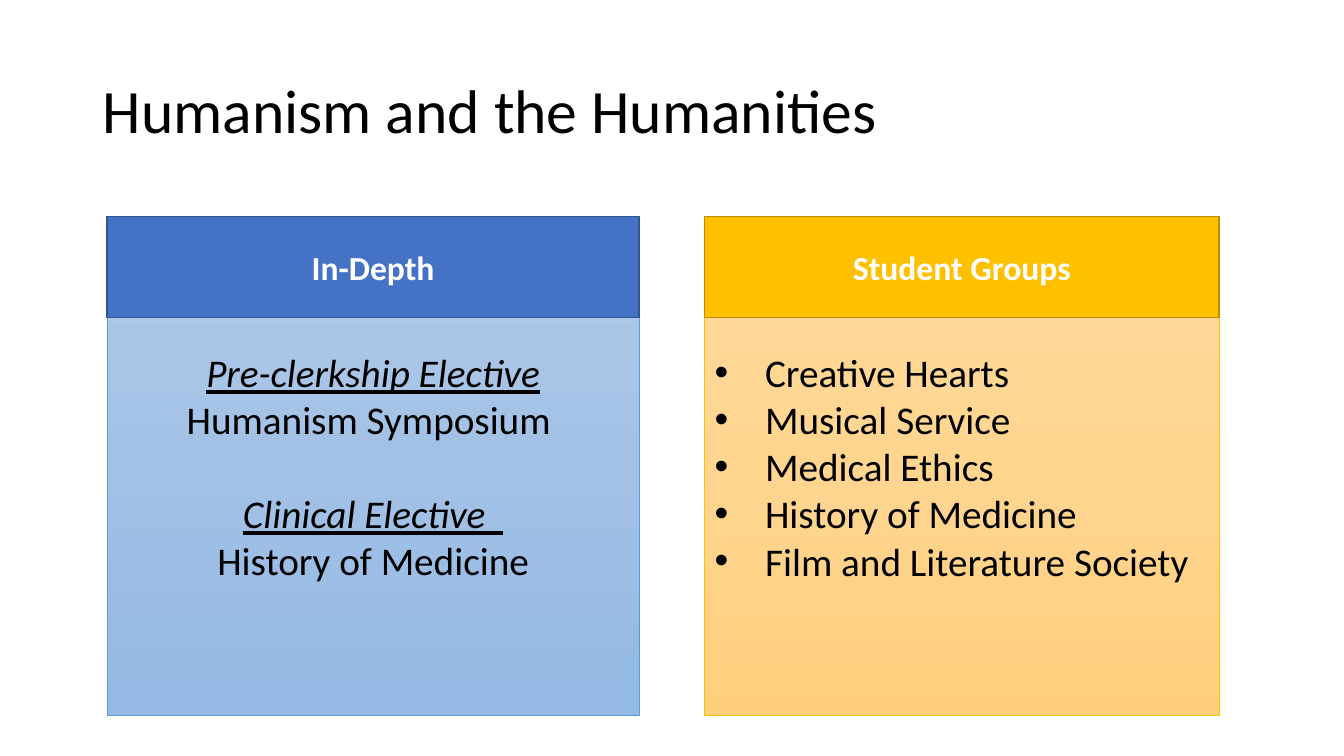
from copy import deepcopy

from lxml import etree
from pptx import Presentation
from pptx.dml.color import RGBColor
from pptx.enum.shapes import MSO_SHAPE
from pptx.enum.text import MSO_ANCHOR, PP_ALIGN
from pptx.oxml.ns import qn
from pptx.util import Inches, Pt

RECTANGLE = MSO_SHAPE.RECTANGLE
MIDDLE = MSO_ANCHOR.MIDDLE
CENTER, LEFT = PP_ALIGN.CENTER, PP_ALIGN.LEFT

FONT = "Calibri"
BLACK, WHITE = "000000", "FFFFFF"
TITLE = "Humanism and the Humanities"
ELECTIVES = [
    ("Pre-clerkship Elective", "Humanism Symposium "),
    ("Clinical Elective  ", "History of Medicine"),
]
GROUPS = [
    "Creative Hearts",
    "Musical Service",
    "Medical Ethics",
    "History of Medicine",
    "Film and Literature Society",
]
COLUMNS = [
    {"heading": "In-Depth", "left": 1.06, "width": 5.28,
     "header_fill": "4472C4", "header_line": "325491",
     "gradient": ["B1CBE9", "A3C1E5", "93B9E4"], "body_line": "5B9BD5"},
    {"heading": "Student Groups", "left": 6.99, "width": 5.1,
     "header_fill": "FFC000", "header_line": "BD8E00",
     "gradient": ["FFDB9E", "FFD590", "FFD07C"], "body_line": "FFC000"},
]
TOP, HEADER_HEIGHT, BODY_HEIGHT = 2.15, 1, 4.95
BODY_SIZE, HEADING_SIZE, TITLE_SIZE = 28, 24, 44
LINE_SPACING = 1.2
BULLET_INDENT = Inches(0.5)


def rgb(color):
    return RGBColor.from_string(color)


def add_run(paragraph, text, size, color=BLACK, **styles):
    run = paragraph.add_run()
    run.text = text
    run.font.name = FONT
    run.font.size = Pt(size)
    run.font.color.rgb = rgb(color)
    for style, value in styles.items():
        setattr(run.font, style, value)


def next_paragraph(frame, alignment):
    """Return the still empty first paragraph, or a new one."""
    first = frame.paragraphs[0]
    paragraph = frame.add_paragraph() if first.runs else first
    paragraph.alignment = alignment
    return paragraph


def add_box(slide, column, height, line_color, line_width):
    shape = slide.shapes.add_shape(
        RECTANGLE, Inches(column["left"]), Inches(TOP),
        Inches(column["width"]), Inches(height))
    shape.shadow.inherit = False
    shape.line.color.rgb = rgb(line_color)
    shape.line.width = Pt(line_width)
    shape.text_frame.word_wrap = True
    shape.text_frame.vertical_anchor = MIDDLE
    return shape


def fill_gradient(shape, colors):
    """Fill from top to bottom with evenly spaced colours."""
    shape.fill.gradient()
    shape.fill.gradient_angle = 270
    stop_list = shape._element.spPr.find(".//" + qn("a:gsLst"))
    while len(stop_list) < len(colors):
        stop_list.append(deepcopy(stop_list[0]))
    for index, (stop, color) in enumerate(zip(shape.fill.gradient_stops, colors)):
        stop.position = index / (len(colors) - 1)
        stop.color.rgb = rgb(color)


def add_bullet(paragraph):
    properties = paragraph._p.get_or_add_pPr()
    properties.set("marL", str(BULLET_INDENT))
    properties.set("indent", str(-BULLET_INDENT))
    etree.SubElement(properties, qn("a:buFont"), typeface="Arial")
    etree.SubElement(properties, qn("a:buChar"), char="•")


def write_electives(frame):
    for index, (kind, course) in enumerate(ELECTIVES):
        paragraph = next_paragraph(frame, CENTER)
        if index:
            paragraph.space_before = Pt(BODY_SIZE * LINE_SPACING)
        add_run(paragraph, kind, BODY_SIZE, italic=True, underline=True)
        add_run(next_paragraph(frame, CENTER), course, BODY_SIZE)


def write_groups(frame):
    for group in GROUPS:
        paragraph = next_paragraph(frame, LEFT)
        add_bullet(paragraph)
        add_run(paragraph, group, BODY_SIZE)


def main():
    presentation = Presentation()
    presentation.slide_width = Inches(13.33)
    presentation.slide_height = Inches(7.5)
    slide = presentation.slides.add_slide(presentation.slide_layouts[5])

    title = slide.shapes.title
    title.left, title.top = Inches(0.92), Inches(0.4)
    title.width, title.height = Inches(11.5), Inches(1.45)
    title.text_frame.vertical_anchor = MIDDLE
    paragraph = next_paragraph(title.text_frame, LEFT)
    paragraph.line_spacing = 0.9
    add_run(paragraph, TITLE, TITLE_SIZE)

    for column, write_body in zip(COLUMNS, (write_electives, write_groups)):
        body = add_box(slide, column, BODY_HEIGHT, column["body_line"], 0.5)
        fill_gradient(body, column["gradient"])
        write_body(body.text_frame)

        header = add_box(slide, column, HEADER_HEIGHT, column["header_line"], 1)
        header.fill.solid()
        header.fill.fore_color.rgb = rgb(column["header_fill"])
        add_run(next_paragraph(header.text_frame, CENTER), column["heading"],
                HEADING_SIZE, WHITE, bold=True)

    presentation.save("out.pptx")


if __name__ == "__main__":
    main()
